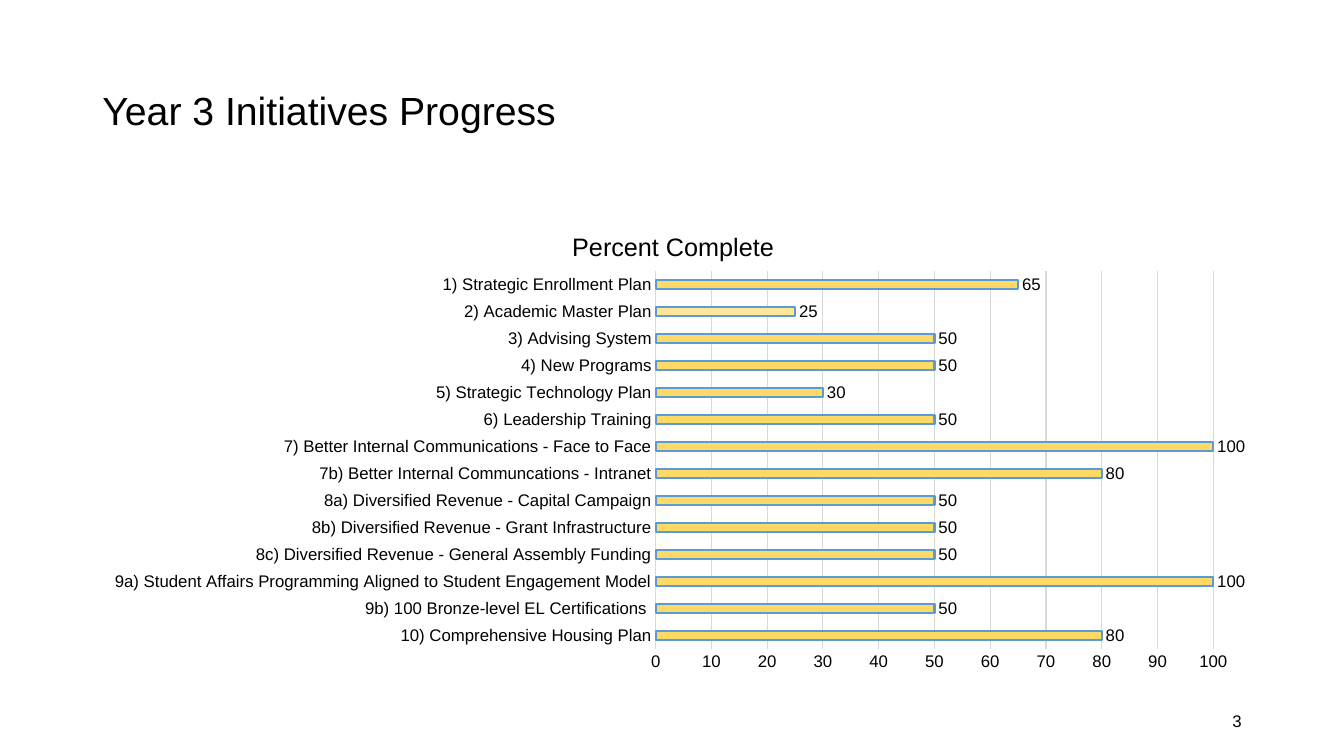
from lxml import etree
from pptx import Presentation
from pptx.chart.data import CategoryChartData
from pptx.dml.color import RGBColor
from pptx.enum.chart import XL_CHART_TYPE, XL_LABEL_POSITION, XL_TICK_MARK
from pptx.enum.text import MSO_ANCHOR, PP_ALIGN
from pptx.oxml.ns import qn
from pptx.util import Pt

PX = 9525
FONT = "Arial"
BLACK = RGBColor(0x00, 0x00, 0x00)
GRID_GREY = RGBColor(0xD9, 0xD9, 0xD9)
BAR_GOLD = RGBColor(0xFF, 0xD9, 0x66)
BAR_PALE = RGBColor(0xFF, 0xE6, 0x99)
BAR_EDGE = RGBColor(0x5B, 0x9B, 0xD5)
BAR_CLUSTERED = XL_CHART_TYPE.BAR_CLUSTERED
OUTSIDE_END = XL_LABEL_POSITION.OUTSIDE_END
NO_TICKS = XL_TICK_MARK.NONE
MIDDLE = MSO_ANCHOR.MIDDLE
LEFT, RIGHT = PP_ALIGN.LEFT, PP_ALIGN.RIGHT

INITIATIVES = [
    ("1) Strategic Enrollment Plan", 65),
    ("2) Academic Master Plan", 25),
    ("3) Advising System", 50),
    ("4) New Programs", 50),
    ("5) Strategic Technology Plan", 30),
    ("6) Leadership Training", 50),
    ("7) Better Internal Communications - Face to Face", 100),
    ("7b) Better Internal Communcations - Intranet", 80),
    ("8a) Diversified Revenue - Capital Campaign", 50),
    ("8b) Diversified Revenue - Grant Infrastructure", 50),
    ("8c) Diversified Revenue - General Assembly Funding", 50),
    ("9a) Student Affairs Programming Aligned to Student Engagement Model", 100),
    ("9b) 100 Bronze-level EL Certifications ", 50),
    ("10) Comprehensive Housing Plan", 80),
]


def style_font(font, size):
    font.name = FONT
    font.size = Pt(size)
    font.bold = False
    font.color.rgb = BLACK


def place(element, index, settings):
    layout = element.find(qn("c:layout"))
    if layout is None:
        layout = etree.Element(qn("c:layout"))
        element.insert(index, layout)
    manual = etree.SubElement(layout, qn("c:manualLayout"))
    for name, value in settings.items():
        etree.SubElement(manual, qn("c:" + name)).set("val", str(value))


deck = Presentation()
deck.slide_width = 1280 * PX
deck.slide_height = 720 * PX
page = deck.slides.add_slide(deck.slide_layouts[5])

title = page.shapes.title
title.left, title.top, title.width, title.height = (n * PX for n in (88, 38, 1104, 139))
title.text_frame.text = "Year 3 Initiatives Progress"
title.text_frame.vertical_anchor = MIDDLE
para = title.text_frame.paragraphs[0]
para.alignment = LEFT
para.line_spacing = 0.9
style_font(para.font, 28)

progress = CategoryChartData(number_format="0")
progress.categories = [name for name, percent in reversed(INITIATIVES)]
progress.add_series("Series 1", [percent for name, percent in reversed(INITIATIVES)])
frame = page.shapes.add_chart(
    BAR_CLUSTERED, 88 * PX, 192 * PX, 1104 * PX, 457 * PX, progress
)
chart = frame.chart
style_font(chart.font, 10)
chart.has_legend = False
chart.has_title = True
heading = chart.chart_title
heading.text_frame.text = "Percent Complete"
style_font(heading.text_frame.paragraphs[0].font, 18)
heading.include_in_layout = False

place(heading._element, 1, {"xMode": "edge", "yMode": "edge", "x": 0.41, "y": 0.05})
place(chart.plots[0]._element.getparent(), 0, {
    "layoutTarget": "inner", "xMode": "edge", "yMode": "edge",
    "x": 0.486, "y": 0.145, "w": 0.481, "h": 0.788,
})

names, scale = chart.category_axis, chart.value_axis
for axis in (names, scale):
    axis.major_tick_mark = NO_TICKS
    axis.minor_tick_mark = NO_TICKS
    style_font(axis.tick_labels.font, 12)
scale.minimum_scale = 0
scale.maximum_scale = 100
scale.major_unit = 10
scale.has_major_gridlines = True
scale.format.line.fill.background()
for line in (names.format.line, scale.major_gridlines.format.line):
    line.color.rgb = GRID_GREY
    line.width = Pt(0.75)

plot = chart.plots[0]
plot.gap_width = 182
plot.vary_by_categories = False
bars = plot.series[0]
academic_bar = bars.points[len(INITIATIVES) - 2]
for part, color in ((bars, BAR_GOLD), (academic_bar, BAR_PALE)):
    part.format.fill.solid()
    part.format.fill.fore_color.rgb = color
    part.format.line.color.rgb = BAR_EDGE
    part.format.line.width = Pt(1.5)
labels = bars.data_labels
labels.show_value = True
labels.number_format = "0"
labels.number_format_is_linked = False
labels.position = OUTSIDE_END
style_font(labels.font, 12)

number_box = page.shapes.add_textbox(904 * PX, 667 * PX, 288 * PX, 38 * PX)
number_box.text_frame.word_wrap = True
number_box.text_frame.vertical_anchor = MIDDLE
number_box.text_frame.text = "3"
para = number_box.text_frame.paragraphs[0]
para.alignment = RIGHT
style_font(para.font, 12)

deck.save("out.pptx")
